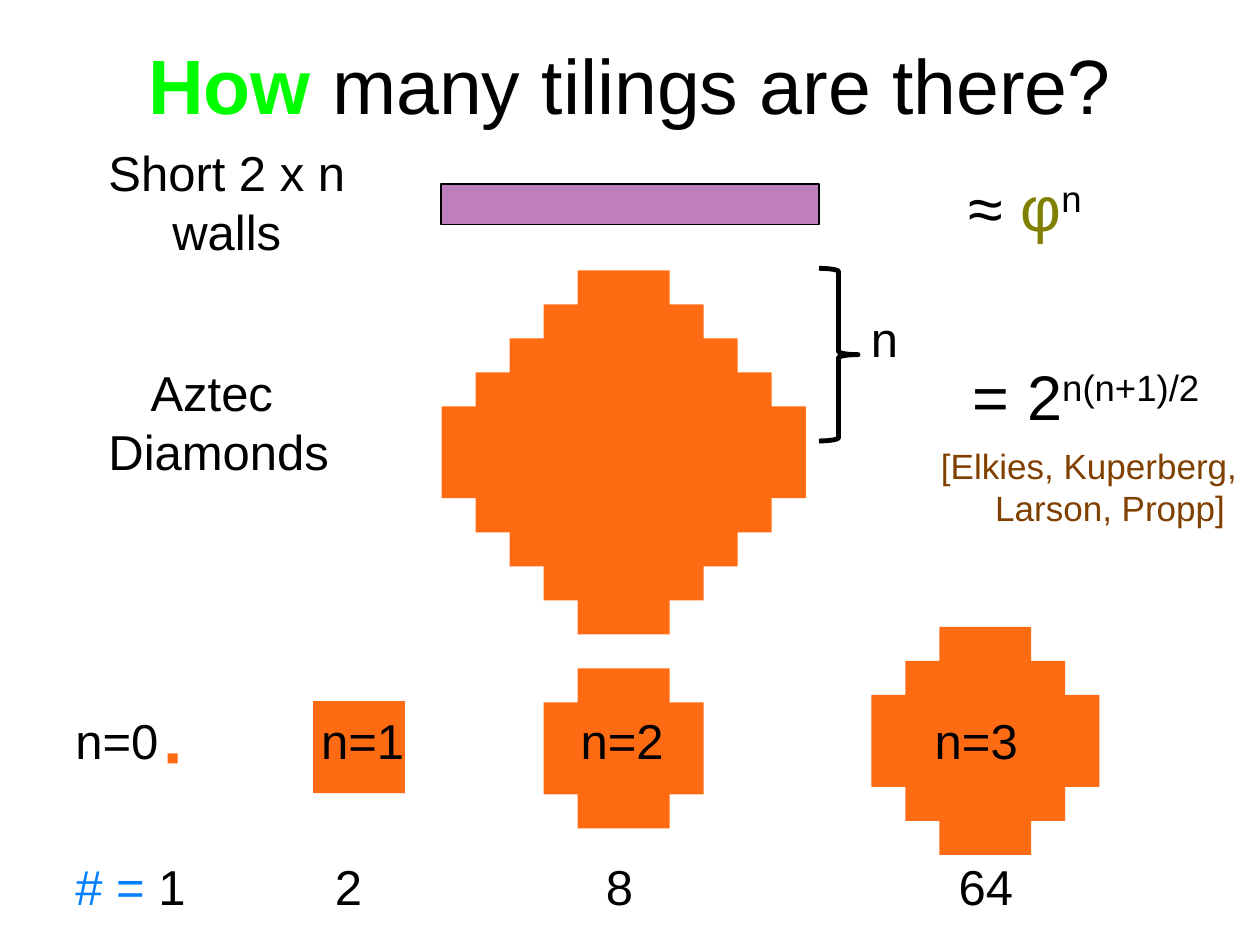
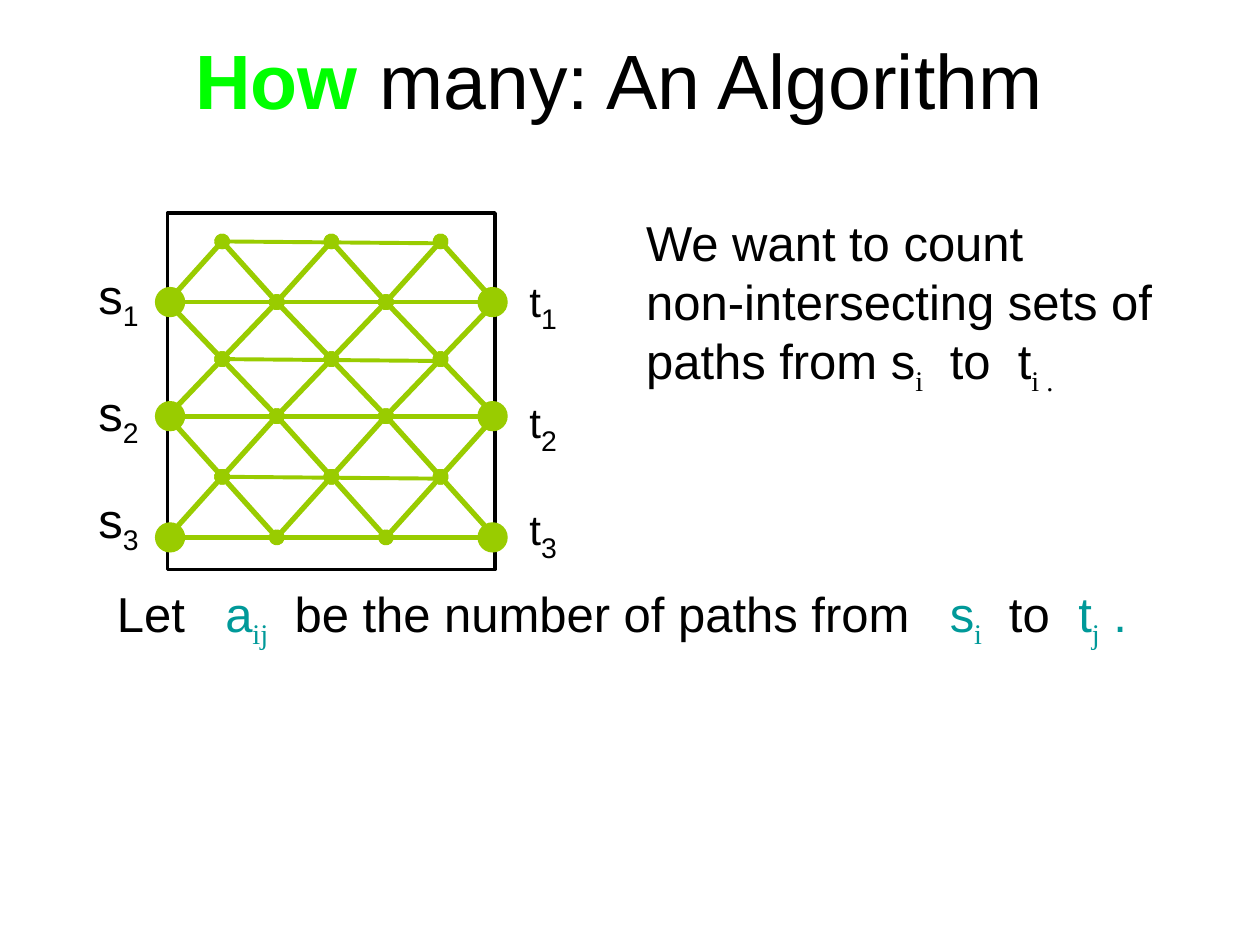
from dataclasses import dataclass

from lxml import etree
from pptx import Presentation
from pptx.dml.color import RGBColor
from pptx.enum.shapes import MSO_CONNECTOR, MSO_SHAPE
from pptx.enum.text import MSO_ANCHOR, MSO_AUTO_SIZE, PP_ALIGN
from pptx.oxml.ns import qn
from pptx.util import Inches, Pt

RECT, OVAL, BRACE = MSO_SHAPE.RECTANGLE, MSO_SHAPE.OVAL, MSO_SHAPE.RIGHT_BRACE
STRAIGHT = MSO_CONNECTOR.STRAIGHT
LEFT, CENTER = PP_ALIGN.LEFT, PP_ALIGN.CENTER
TOP, MIDDLE = MSO_ANCHOR.TOP, MSO_ANCHOR.MIDDLE
FIT = MSO_AUTO_SIZE.SHAPE_TO_FIT_TEXT


@dataclass(frozen=True)
class Theme:
    sans: str = "Arial"
    serif: str = "Times New Roman"
    black: str = "000000"
    how: str = "00FF00"
    wall: str = "800080"
    phi: str = "808000"
    diamond: str = "FF6B13"
    credit: str = "804000"
    count: str = "0080FF"
    lattice: str = "99CC00"
    variable: str = "009999"
    title: int = 44
    formula: int = 36
    body: int = 28
    sink: int = 24
    small: int = 20


T = Theme()
WIDTH, HEIGHT = Inches(10), Inches(7.5)
COLS, ROWS = 100, 75
SUP, SUB = 30000, -25000
CORE, STEP = 7.3, 5.4


def col(n):
    return round(n * WIDTH / COLS)


def row(n):
    return round(n * HEIGHT / ROWS)


def emu(box):
    x, y, w, h = box
    return col(x), row(y), col(w), row(h)


def inside(box, x, y, w, h):
    return box[0] + x, box[1] + y, w, h


def rgb(color):
    return RGBColor.from_string(color)


def add_run(p, text, size=T.body, color=T.black, base=0, bold=False, font=T.sans):
    r = p.add_run()
    r.text = text
    r.font.name, r.font.size, r.font.bold = font, Pt(size), bold
    r.font.color.rgb = rgb(color)
    if base:
        r._r.get_or_add_rPr().set("baseline", str(base))


def add_tabs(p, stops):
    tabs = etree.SubElement(p._p.get_or_add_pPr(), qn("a:tabLst"))
    for stop in stops:
        etree.SubElement(tabs, qn("a:tab"), pos=str(col(stop)), algn="l")


def add_text(s, box, paragraphs, align=CENTER, anchor=TOP, wrap=False, tabs=(), indents=()):
    tf = s.shapes.add_textbox(*emu(box)).text_frame
    tf.word_wrap, tf.auto_size, tf.vertical_anchor = wrap, FIT, anchor
    for i, runs in enumerate(paragraphs):
        p = tf.add_paragraph() if i else tf.paragraphs[0]
        p.alignment = align
        if tabs:
            add_tabs(p, tabs)
        if indents:
            p._p.get_or_add_pPr().set("marL", str(col(indents[i])))
        for text, style in runs:
            add_run(p, text, **style)


def add_shape(s, kind, box, fill=None, line=None, width=0.75):
    sp = s.shapes.add_shape(kind, *emu(box))
    sp.shadow.inherit = False
    if fill:
        sp.fill.solid()
        sp.fill.fore_color.rgb = rgb(fill)
    else:
        sp.fill.background()
    if line:
        sp.line.color.rgb = rgb(line)
        sp.line.width = Pt(width)
    else:
        sp.line.fill.background()
    return sp


def add_edge(s, start, end, width, ends=()):
    cx = s.shapes.add_connector(STRAIGHT, col(start[0]), row(start[1]), col(end[0]), row(end[1]))
    cx.line.color.rgb = rgb(T.lattice)
    cx.line.width = Pt(width)
    ln = cx.line._get_or_add_ln()
    for end_name in ends:
        etree.SubElement(ln, qn(f"a:{end_name}"), type="oval")
    etree.SubElement(cx._element.spPr, qn("a:effectLst"))


def titled_slide(prs, top, rest):
    s = prs.slides.add_slide(prs.slide_layouts[5])
    title = s.shapes.title
    title.left, title.top, title.width, title.height = emu((7.5, top, 85, 12.5))
    tf = title.text_frame
    tf.vertical_anchor = MIDDLE
    p = tf.paragraphs[0]
    p.alignment = CENTER
    add_run(p, "How ", T.title, T.how, bold=True)
    add_run(p, rest, T.title)
    return s


def centred_rect(s, cx, cy, w, h):
    add_shape(s, RECT, (cx - w / 2, cy - h / 2, w, h), T.diamond)


def add_diamond(s, cx, cy, order):
    sides = [CORE + STEP * k for k in range(order)]
    for w, h in zip(sides, reversed(sides)):
        centred_rect(s, cx, cy, w, h)


def add_formula(s, box, runs):
    add_text(s, box, [[(text, {"size": T.formula, **style}) for text, style in runs]])


def short_walls(s, box):
    add_text(s, inside(box, 7.5, 0.4, 21, 10.4), [[("Short 2 x n ", {})], [("walls", {})]])
    bar = add_shape(s, RECT, inside(box, 35, 4.2, 30, 3.2), T.wall, T.black)
    color = bar.fill._xPr.find(qn("a:solidFill"))[0]
    etree.SubElement(color, qn("a:alpha"), val="50000")
    add_formula(s, inside(box, 75.6, 2.5, 11.5, 7.1),
                [("≈ ", {}), ("φ", {"color": T.phi}), ("n", {"base": SUP})])


def aztec_diamonds(s, box):
    x, y = box[:2]
    add_text(s, inside(box, 7.5, 7, 19.7, 10.4), [[("Aztec ", {})], [("Diamonds", {})]])
    add_diamond(s, x + 49.5, y + 14.6, 5)
    add_shape(s, BRACE, inside(box, 65, 0, 3.1, 13.7), line=T.black, width=2.75)
    add_text(s, inside(box, 68.1, 2.7, 4.2, 5.7), [[("n", {})]])
    add_formula(s, inside(box, 75.6, 6.6, 21.2, 7.1), [("= 2", {}), ("n(n+1)/2", {"base": SUP})])
    credit = {"size": T.small, "color": T.credit}
    add_text(s, inside(box, 71.9, 13.5, 27.6, 8.4),
             [[("[Elkies, Kuperberg,", credit)], [("Larson, Propp]", credit)]],
             LEFT, indents=(1.8, 6.1))


def small_orders(s, box):
    x, y = box[:2]
    centred_rect(s, x + 8.7, y + 10.4, 0.8, 0.8)
    for order, (cx, cy) in enumerate([(23.5, 9.5), (44.5, 9.6), (73.2, 9)], 1):
        add_diamond(s, x + cx, y + cy, order)
    add_text(s, inside(box, 0, 17.7, 82.4, 5.7),
             [[("# = ", {"color": T.count}), ("1\t2\t8\t64", {})]],
             LEFT, wrap=True, tabs=(20.6, 42.1, 70.1))
    add_text(s, inside(box, 0, 6.1, 89.2, 5.7), [[("n=0\tn=1\tn=2\tn=3", {})]],
             LEFT, wrap=True, tabs=(19.5, 40.1, 68.2))


def path_lattice(s, box):
    x, y, w, h = box
    xs = [x + w * k / 6 for k in range(7)]
    main_xs, peak_xs = xs[::2], xs[1::2]
    main_ys = [y + h * share for share in (0.25, 0.57, 0.91)]
    peak_ys = [y + h * share for share in (0.08, 0.41, 0.74)]
    add_shape(s, RECT, box, line=T.black, width=2)
    for i, main_y in enumerate(main_ys):
        for a, b in zip(main_xs, main_xs[1:]):
            add_edge(s, (b, main_y), (a, main_y), 2.75, ["headEnd"])
        for peak_y in peak_ys[i:i + 2]:
            for k, peak_x in enumerate(peak_xs):
                for main_x in main_xs[k:k + 2]:
                    add_edge(s, (main_x, main_y), (peak_x, peak_y), 3, ["headEnd", "tailEnd"])
        add_edge(s, (peak_xs[0], peak_ys[i]), (peak_xs[-1], peak_ys[i] + 0.15), 2.25)
        for dot_x in (x + 0.2, x + w - 0.2):
            add_shape(s, OVAL, (dot_x - 1.15, main_y - 1.15, 2.3, 2.3), T.lattice, T.lattice)
    add_labels(s, "s", T.body, x - 6.6, 5.4, 5.7, [y + h * v for v in (0.24, 0.57, 0.87)])
    add_labels(s, "t", T.sink, x + w + 1.6, 4.4, 5, [y + h * v for v in (0.25, 0.59, 0.89)])


def add_labels(s, letter, size, left, w, h, centres):
    for i, cy in enumerate(centres, 1):
        add_text(s, (left, cy - h / 2, w, h),
                 [[(letter, {"size": size}), (str(i), {"base": SUB})]], anchor=MIDDLE)


def counting_goal(s, box):
    index = {"font": T.serif, "base": SUB}
    add_text(s, box, [
        [("We want to count", {})],
        [("non-intersecting sets of", {})],
        [("paths from s", {}), ("i", index), ("\tto\tt", {}), ("i .", index)],
    ], LEFT, wrap=True, tabs=(24.1, 29.5))


def path_definition(s, box):
    var = {"color": T.variable}
    index = {"font": T.serif, "base": SUB, **var}
    add_text(s, box, [[
        ("Let\t", {}), ("a", var), ("ij", index),
        ("\tbe the number of paths from\t", {}), ("s", var), ("i", index),
        ("\tto\t", {}), ("t", var), ("j", index), (" .", var),
    ]], LEFT, wrap=True, tabs=(8.6, 14.1, 66.1, 70.8, 76.3))


def tilings_slide(prs):
    s = titled_slide(prs, 0.4, "many tilings are there?")
    short_walls(s, (0, 10.4, 100, 11))
    aztec_diamonds(s, (0, 21.3, 100, 28.8))
    small_orders(s, (5, 49.8, 90, 24))


def algorithm_slide(prs):
    s = titled_slide(prs, 0, "many: An Algorithm ")
    counting_goal(s, (50.3, 16.4, 43, 15))
    path_definition(s, (8.3, 45.8, 85, 6.5))
    path_lattice(s, (13.3, 16.9, 26, 28.3))


def main():
    prs = Presentation()
    prs.slide_width, prs.slide_height = WIDTH, HEIGHT
    tilings_slide(prs)
    algorithm_slide(prs)
    prs.save("out.pptx")


if __name__ == "__main__":
    main()
